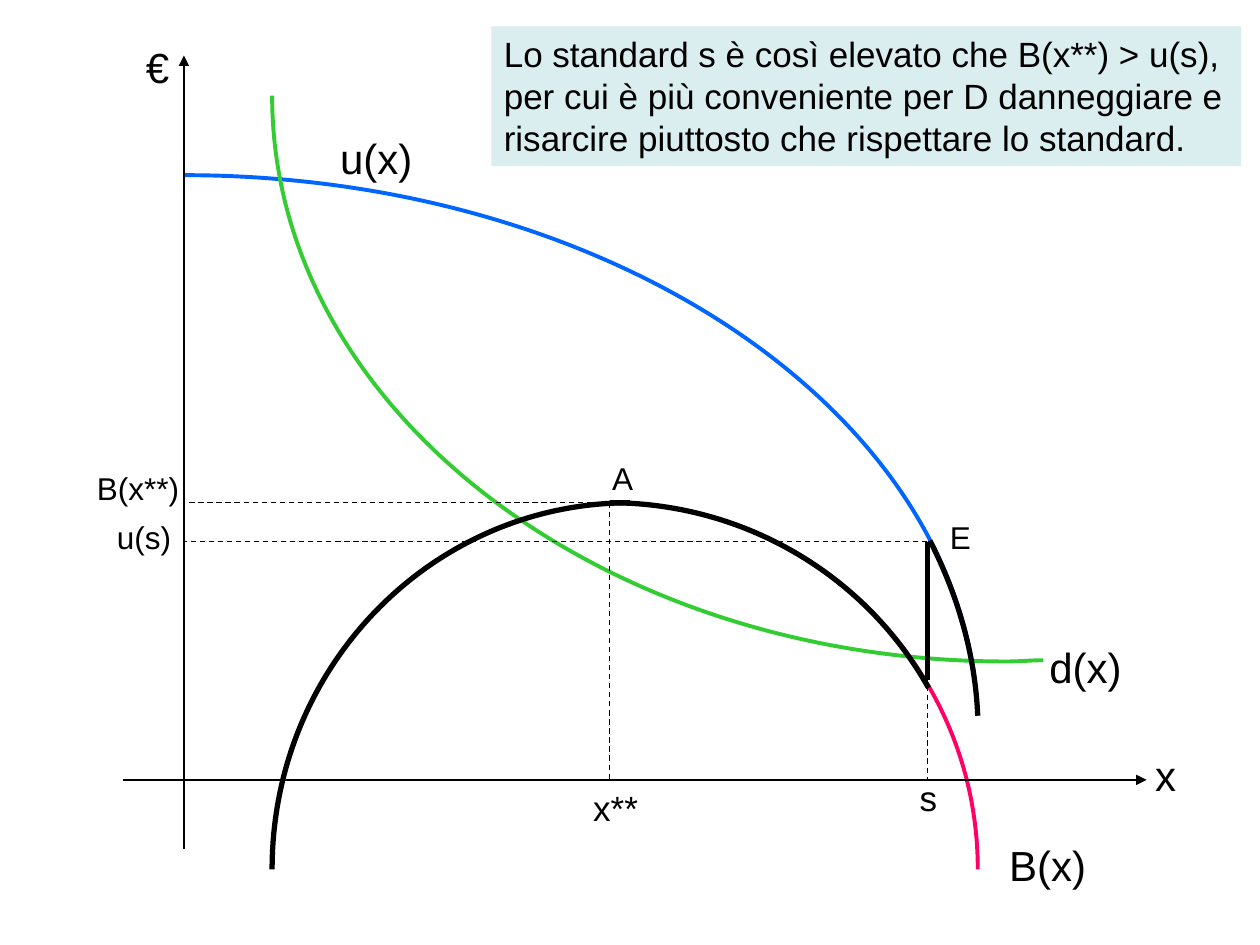
from dataclasses import dataclass

from lxml import etree
from pptx import Presentation
from pptx.dml.color import RGBColor
from pptx.enum import dml, text
from pptx.enum.shapes import MSO_CONNECTOR
from pptx.oxml.ns import qn
from pptx.util import Inches, Pt

BLACK = RGBColor(0x00, 0x00, 0x00)
BLUE = RGBColor(0x00, 0x66, 0xFF)
GREEN = RGBColor(0x33, 0xCC, 0x33)
PINK = RGBColor(0xFF, 0x00, 0x66)
PALE_TEAL = RGBColor(0xDA, 0xED, 0xEF)
FONT = "Arial"

# Key positions of the diagram, in inches
AXIS_X, AXIS_Y = 1.46, 6.19
OPTIMUM_X, OPTIMUM_Y = 4.84, 3.99
STANDARD_X, STANDARD_Y = 7.36, 4.3


@dataclass
class Curve:
    """A start point followed by triples of cubic Bezier points."""
    points: list[tuple[float, float]]
    color: RGBColor
    width: float


@dataclass
class Line:
    start: tuple[float, float]
    end: tuple[float, float]
    width: float = 0.75
    dashed: bool = False
    arrow: bool = False


@dataclass
class Label:
    wording: str
    left: float
    top: float
    width: float
    height: float
    size: int


CURVES = [
    # u(x), d(x), then B(x) rising and falling
    Curve([(1.46, 1.39), (4.87, 1.39), (7.67, 3.29), (7.76, 5.68)], BLUE, 2.25),
    Curve([(8.28, 5.24), (8.19, 5.24), (8.09, 5.25), (7.99, 5.25),
           (4.77, 5.25), (2.16, 3.24), (2.16, 0.76)], GREEN, 2.25),
    Curve([(5, 3.99), (3.43, 3.99), (2.16, 5.29), (2.16, 6.9)], BLACK, 3),
    Curve([(4.84, 3.99), (6.45, 3.99), (7.76, 5.29), (7.76, 6.9)], PINK, 2.25),
    # Highlighted parts of B(x) and u(x)
    Curve([(4.84, 3.99), (5.89, 3.99), (6.86, 4.55), (7.37, 5.46)], BLACK, 3),
    Curve([(7.38, 4.29), (7.61, 4.74), (7.74, 5.21), (7.76, 5.68)], BLACK, 3),
]

LINES = [
    # Axes
    Line((AXIS_X, 6.74), (AXIS_X, 0.44), arrow=True),
    Line((0.98, AXIS_Y), (9.1, AXIS_Y), arrow=True),
    # Projections of A and E onto the axes
    Line((OPTIMUM_X, OPTIMUM_Y), (OPTIMUM_X, AXIS_Y), dashed=True),
    Line((OPTIMUM_X, OPTIMUM_Y), (AXIS_X, OPTIMUM_Y), dashed=True),
    Line((STANDARD_X, STANDARD_Y), (STANDARD_X, AXIS_Y), dashed=True),
    Line((STANDARD_X, STANDARD_Y), (AXIS_X, STANDARD_Y), dashed=True),
    # Jump at the standard
    Line((STANDARD_X, STANDARD_Y), (STANDARD_X, 5.4), width=3),
]

LABELS = [
    Label("d(x)", 8.23, 5.04, 0.78, 0.5, 24),
    Label("u(x)", 2.6, 1, 0.78, 0.5, 24),
    Label("B(x)", 7.91, 6.61, 0.81, 0.5, 24),
    Label("x", 9.07, 5.9, 0.37, 0.5, 24),
    Label("€", 1.06, 0.28, 0.39, 0.5, 24),
    Label("x**", 4.61, 6.19, 0.56, 0.43, 20),
    Label("s", 7.2, 6.11, 0.34, 0.43, 20),
    Label("A", 4.76, 3.59, 0.37, 0.4, 18),
    Label("E", 7.44, 4.06, 0.37, 0.4, 18),
    Label("B(x**)", 0.67, 3.67, 0.85, 0.4, 18),
    Label("u(s)", 0.83, 4.06, 0.63, 0.4, 18),
]

COMMENT = Label(
    "Lo standard s è così elevato che B(x**) > u(s),\n"
    "per cui è più conveniente per D danneggiare e risarcire "
    "piuttosto che rispettare lo standard.",
    3.9, 0.21, 5.95, 1.11, 20)


def draw_curve(slide, curve: Curve) -> None:
    points = [(Inches(x), Inches(y)) for x, y in curve.points]
    builder = slide.shapes.build_freeform(*points[0])
    builder.add_line_segments(points[1:], close=False)
    shape = builder.convert_to_shape()
    shape.shadow.inherit = False
    shape.fill.background()
    shape.line.color.rgb = curve.color
    shape.line.width = Pt(curve.width)

    # Turn each three straight segments into one Bezier segment
    path = next(shape.element.iter(qn("a:path")))
    segments = path.findall(qn("a:lnTo"))
    for first in range(0, len(segments), 3):
        bezier = etree.SubElement(path, qn("a:cubicBezTo"))
        for segment in segments[first:first + 3]:
            bezier.append(segment[0])
            path.remove(segment)


def draw_line(slide, line: Line) -> None:
    ends = [Inches(value) for value in (*line.start, *line.end)]
    connector = slide.shapes.add_connector(MSO_CONNECTOR.STRAIGHT, *ends)
    connector.line.color.rgb = BLACK
    connector.line.width = Pt(line.width)
    if line.dashed:
        connector.line.dash_style = dml.MSO_LINE.DASH
    properties = connector.element.spPr
    if line.arrow:
        outline = properties.find(qn("a:ln"))
        etree.SubElement(outline, qn("a:tailEnd"), type="triangle")
    etree.SubElement(properties, qn("a:effectLst"))


def draw_label(slide, label: Label, wrap: bool = False):
    box = slide.shapes.add_textbox(Inches(label.left), Inches(label.top),
                                   Inches(label.width), Inches(label.height))
    frame = box.text_frame
    frame.text = label.wording
    frame.word_wrap = wrap
    frame.auto_size = text.MSO_AUTO_SIZE.SHAPE_TO_FIT_TEXT
    for paragraph in frame.paragraphs:
        paragraph.font.name = FONT
        paragraph.font.size = Pt(label.size)
        paragraph.font.color.rgb = BLACK
    return box


def main() -> None:
    presentation = Presentation()
    presentation.slide_width = Inches(10)
    presentation.slide_height = Inches(7.5)
    slide = presentation.slides.add_slide(presentation.slide_layouts[6])

    for curve in CURVES:
        draw_curve(slide, curve)
    for line in LINES:
        draw_line(slide, line)
    for label in LABELS:
        draw_label(slide, label)

    # Comment on the diagram
    comment = draw_label(slide, COMMENT, wrap=True)
    comment.fill.solid()
    comment.fill.fore_color.rgb = PALE_TEAL

    presentation.save("out.pptx")


if __name__ == "__main__":
    main()
